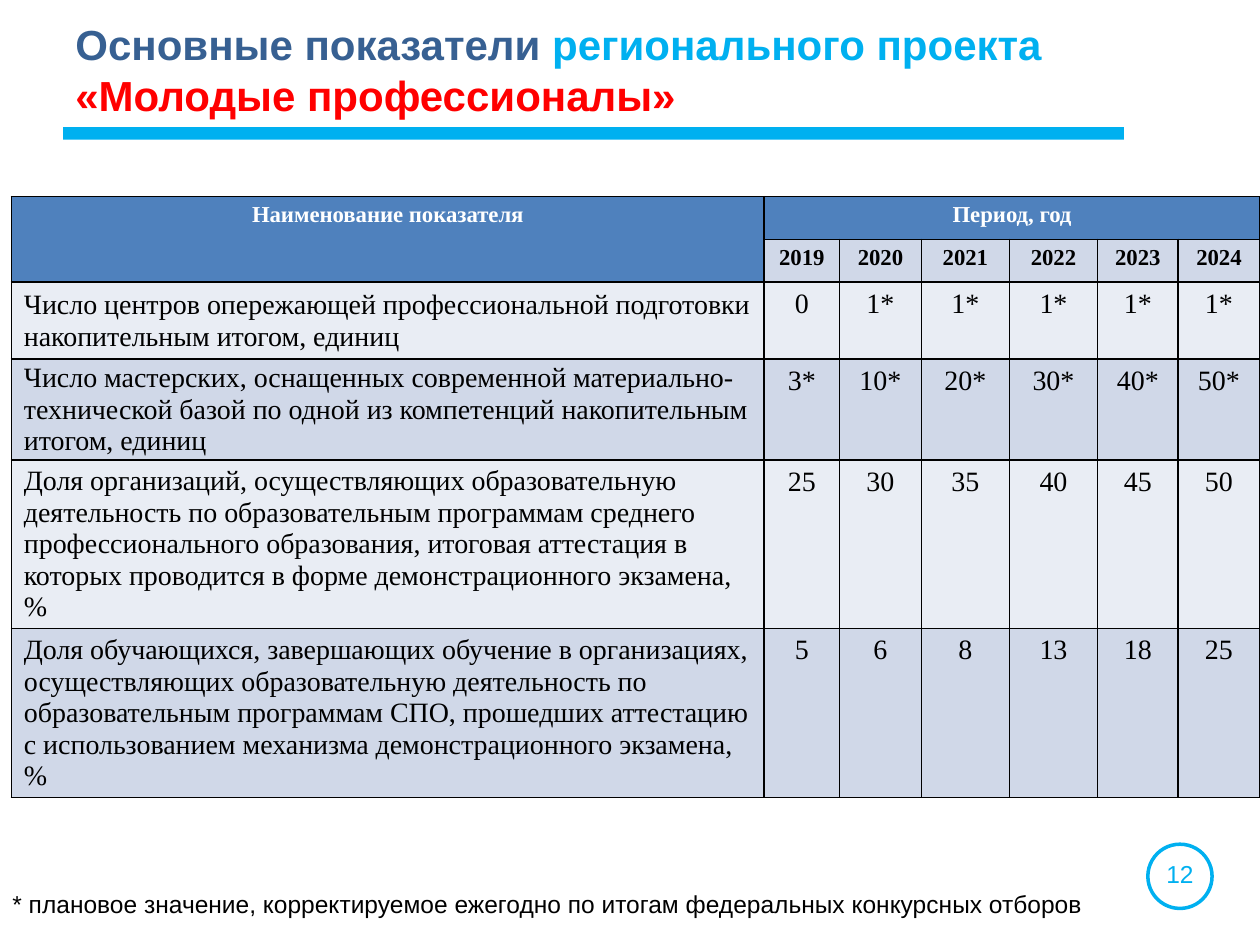
from pptx import Presentation
from pptx.dml.color import RGBColor as Rgb
from pptx.enum.shapes import MSO_SHAPE as Kind
from pptx.enum.text import MSO_ANCHOR as Anchor, PP_ALIGN as Align
from pptx.oxml import parse_xml
from pptx.oxml.ns import nsdecls
from pptx.util import Inches, Pt

WIDE, HIGH = 10, 7.5
SANS, SERIF = "Arial", "Times New Roman"
INK = {
    "sky": "00B0F0", "navy": "376092", "red": "FF0000", "black": "000000",
    "white": "FFFFFF", "head": "4F81BD", "dark": "D0D8E8", "light": "E9EDF4",
}
TITLE = [
    ("Основные показатели ", "navy"),
    ("регионального проекта ", "sky"),
    ("«Молодые профессионалы»", "red"),
]
NOTE = "* плановое значение, корректируемое ежегодно по итогам федеральных конкурсных отборов"
YEARS = [str(year) for year in range(2019, 2025)]
GOALS = [
    ("Число центров опережающей профессиональной подготовки накопительным итогом, единиц",
     ["0"] + ["1*"] * 5),
    ("Число мастерских, оснащенных современной материально-технической базой "
     "по одной из компетенций накопительным итогом, единиц",
     ["3*", "10*", "20*", "30*", "40*", "50*"]),
    ("Доля организаций, осуществляющих образовательную деятельность по образовательным "
     "программам среднего профессионального образования, итоговая аттестация в которых "
     "проводится в форме демонстрационного экзамена, %",
     ["25", "30", "35", "40", "45", "50"]),
    ("Доля обучающихся, завершающих обучение в организациях, осуществляющих образовательную "
     "деятельность по образовательным программам СПО, прошедших аттестацию с использованием "
     "механизма демонстрационного экзамена, %",
     ["5", "6", "8", "13", "18", "25"]),
]
COLS = [5.98, 0.6, 0.65, 0.7, 0.7, 0.64, 0.65]
ROWS = [0.34, 0.34, 0.61, 0.8, 1.34, 1.34]


def tint(name):
    return Rgb.from_string(INK[name])


def place(box):
    return [Inches(part) for part in box]


def style(run, size, face, color, bold=False):
    font = run.font
    font.size, font.name, font.bold = Pt(size), face, bold
    font.color.rgb = tint(color)


def write(slide, box, parts, size, bold=False, align=Align.LEFT):
    frame = slide.shapes.add_textbox(*place(box)).text_frame
    frame.word_wrap = True
    para = frame.paragraphs[0]
    para.alignment = align
    for text, color in parts:
        run = para.add_run()
        run.text = text
        style(run, size, SANS, color, bold)


def draw(slide, kind, box, fill=None, line=None):
    shape = slide.shapes.add_shape(kind, *place(box))
    shape.shadow.inherit = False
    if fill:
        shape.fill.solid()
        shape.fill.fore_color.rgb = tint(fill)
    else:
        shape.fill.background()
    if line:
        shape.line.color.rgb = tint(line)
        shape.line.width = Pt(2)
    else:
        shape.line.fill.background()


def header(slide, box):
    left, top, width, height = box
    write(slide, box, TITLE, 24, True)
    draw(slide, Kind.RECTANGLE, (left, top + 0.85 * height, width, 0.1), fill="sky")


def badge(slide, box):
    left, top, side, _ = box
    draw(slide, Kind.OVAL, box, line="sky")
    write(slide, (left - 0.03, top + 0.07, side + 0.06, 0.34), [("12", "sky")], 14,
          align=Align.CENTER)


def border(cell):
    props = cell._tc.get_or_add_tcPr()
    for spot, side in enumerate(("lnL", "lnR", "lnT", "lnB")):
        props.insert(spot, parse_xml(
            f'<a:{side} {nsdecls("a")} w="{Pt(1)}"><a:solidFill>'
            f'<a:srgbClr val="{INK["black"]}"/></a:solidFill></a:{side}>'))


def fill_cell(cell, text, back, size=16, color="black", bold=False, label=False):
    cell.text_frame.text = text
    para = cell.text_frame.paragraphs[0]
    if label:
        cell.vertical_anchor = Anchor.MIDDLE
        cell.margin_left = cell.margin_right = Inches(0.02)
        cell.margin_top = cell.margin_bottom = 0
        para.line_spacing = Pt(18)
        para._p.get_or_add_pPr().set("marL", str(Inches(0.08)))
    else:
        para.alignment = Align.CENTER
    for run in para.runs:
        style(run, size, SERIF, color, bold)
    cell.fill.solid()
    cell.fill.fore_color.rgb = tint(back)
    border(cell)


def goals(slide, box):
    grid = slide.shapes.add_table(len(ROWS), len(COLS), *place(box)).table
    for col, share in zip(grid.columns, COLS):
        col.width = Inches(box[2] * share / sum(COLS))
    for row, share in zip(grid.rows, ROWS):
        row.height = Inches(box[3] * share / sum(ROWS))
    grid.cell(0, 0).merge(grid.cell(1, 0))
    grid.cell(0, 1).merge(grid.cell(0, len(COLS) - 1))
    top = ["Наименование показателя", "Период, год"] + [""] * 5
    for col, text in enumerate(top):
        fill_cell(grid.cell(0, col), text, "head", 13, "white", True)
    fill_cell(grid.cell(1, 0), "", "head", 13)
    for col, year in enumerate(YEARS, 1):
        fill_cell(grid.cell(1, col), year, "dark", 13, bold=True)
    for row, (name, values) in enumerate(GOALS, 2):
        back = "dark" if row % 2 else "light"
        fill_cell(grid.cell(row, 0), name, back, label=True)
        for col, value in enumerate(values, 1):
            fill_cell(grid.cell(row, col), value, back)


def main():
    deck = Presentation()
    deck.slide_width, deck.slide_height = Inches(WIDE), Inches(HIGH)
    slide = deck.slides.add_slide(deck.slide_layouts[6])
    header(slide, (0.05 * WIDE, 0.1, 0.842 * WIDE, 1.07))
    goals(slide, (0.09, 1.56, WIDE - 0.09, sum(ROWS)))
    badge(slide, (9.11, 6.7, 0.51, 0.51))
    write(slide, (0, 7.01, 0.889 * WIDE, 0.35), [(NOTE, "black")], 14)
    deck.save("out.pptx")


if __name__ == "__main__":
    main()
